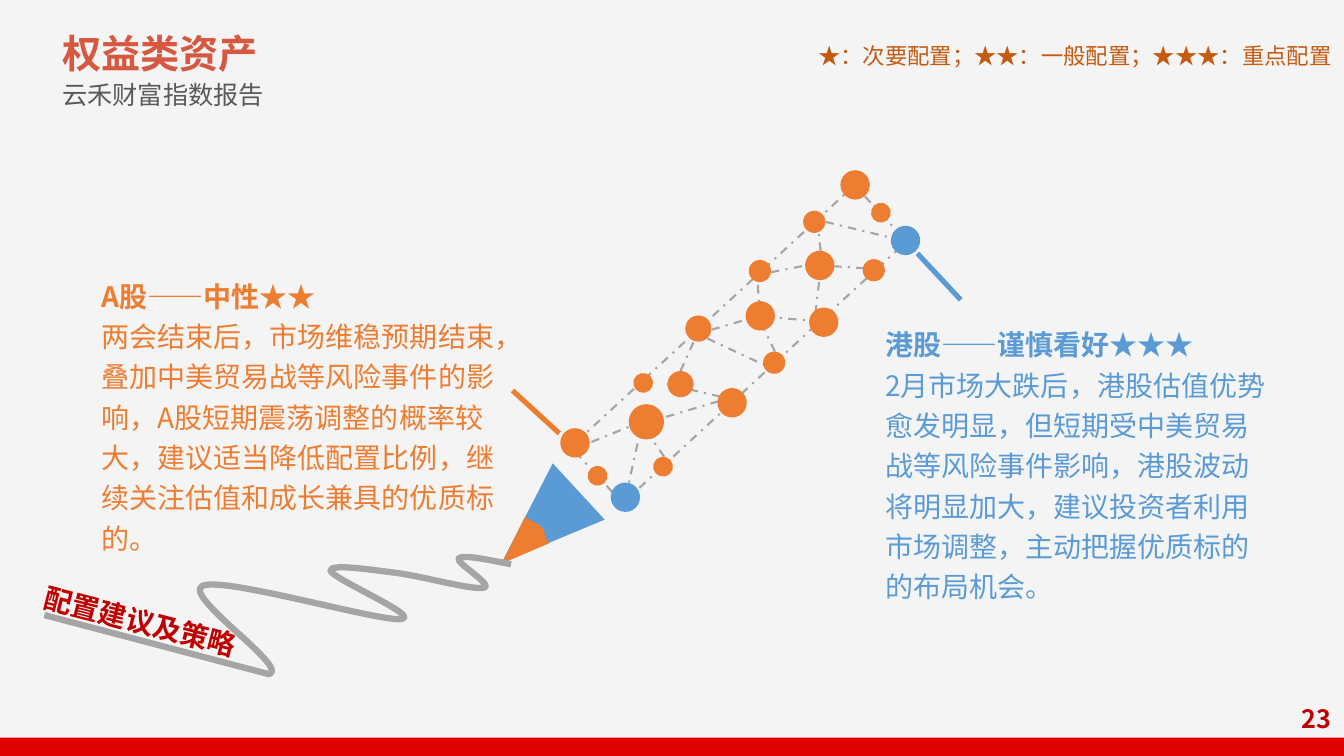
from dataclasses import dataclass

import pptx
import pptx.dml.color
import pptx.enum.dml
import pptx.enum.shapes
import pptx.enum.text
import pptx.oxml
import pptx.util
from pptx.util import Cm

SHAPE = pptx.enum.shapes.MSO_SHAPE
ALIGN = pptx.enum.text.PP_ALIGN
ANCHOR = pptx.enum.text.MSO_ANCHOR


@dataclass(frozen=True)
class Theme:
    font: str = "Noto Sans CJK SC"
    back: str = "F4F4F4"
    band: str = "E10000"
    title: str = "D65840"
    sub: str = "595959"
    key: str = "C55A11"
    mark: str = "C00000"
    warm: str = "ED7D31"
    cool: str = "5B9BD5"
    wire: str = "A5A5A5"
    head: float = 28
    body: float = 20
    small: float = 18
    note: float = 16


THEME = Theme()


@dataclass(frozen=True)
class Run:
    text: str
    size: float
    color: str
    bold: bool = False


@dataclass(frozen=True)
class Box:
    x: float
    y: float
    w: float
    h: float
    paras: list[list[Run]]
    align: ALIGN = ALIGN.LEFT
    anchor: ANCHOR = ANCHOR.MIDDLE
    space: float = 1.0
    foot: float = 0.13
    turn: float = 0
    wrap: bool = True


@dataclass(frozen=True)
class Dot:
    x: float
    y: float
    d: float
    color: str = THEME.warm


@dataclass(frozen=True)
class Block:
    kind: SHAPE
    x: float
    y: float
    w: float
    h: float
    fill: str
    turn: float = 0


Point = tuple[float, float]
Move = tuple[Point, ...]  # one point for a line, three for a curve


def rgb(color: str) -> pptx.dml.color.RGBColor:
    return pptx.dml.color.RGBColor.from_string(color)


def fill_text(shape, box: Box) -> None:
    shape.left, shape.top, shape.width, shape.height = map(Cm, (box.x, box.y, box.w, box.h))
    shape.rotation = box.turn
    frame = shape.text_frame
    frame.auto_size = pptx.enum.text.MSO_AUTO_SIZE.NONE
    frame.word_wrap = box.wrap
    frame.vertical_anchor = box.anchor
    frame.margin_left = frame.margin_right = Cm(0.25)
    frame.margin_top, frame.margin_bottom = Cm(0.13), Cm(box.foot)
    for i, runs in enumerate(box.paras):
        para = frame.paragraphs[0] if i == 0 else frame.add_paragraph()
        para.alignment, para.line_spacing = box.align, box.space
        para.space_before = para.space_after = pptx.util.Pt(0)
        for item in runs:
            run = para.add_run()
            run.text = item.text
            run.font.name, run.font.size = THEME.font, pptx.util.Pt(item.size)
            run.font.bold = item.bold
            run.font.color.rgb = rgb(item.color)
            east = pptx.oxml.xmlchemy.OxmlElement("a:ea")
            east.set("typeface", THEME.font)
            run.font._element.find(pptx.oxml.ns.qn("a:latin")).addnext(east)


def add_block(slide, part: Block):
    shape = slide.shapes.add_shape(part.kind, *map(Cm, (part.x, part.y, part.w, part.h)))
    shape.rotation = part.turn
    shape.shadow.inherit = False
    shape.fill.solid()
    shape.fill.fore_color.rgb = rgb(part.fill)
    shape.line.fill.background()
    return shape


def set_wire(line, width: float, dash: bool = False) -> None:
    line.color.rgb = rgb(THEME.wire)
    line.width = pptx.util.Pt(width)
    if dash:
        line.dash_style = pptx.enum.dml.MSO_LINE.DASH_DOT


def add_link(slide, ends: tuple[float, float, float, float]) -> None:
    link = slide.shapes.add_connector(pptx.enum.shapes.MSO_CONNECTOR.STRAIGHT, *map(Cm, ends))
    set_wire(link.line, 1.5, True)
    link._element.spPr.append(pptx.oxml.xmlchemy.OxmlElement("a:effectLst"))


def add_path(slide, start: Point, moves: list[Move], close: bool):
    """Lay all points as lines, then fold each group of three into a curve."""
    pen = slide.shapes.build_freeform(Cm(start[0]), Cm(start[1]))
    pen.add_line_segments([(Cm(x), Cm(y)) for move in moves for x, y in move], close=close)
    shape = pen.convert_to_shape()
    shape.shadow.inherit = False
    lines = iter(list(shape._element.iter(pptx.oxml.ns.qn("a:lnTo"))))
    for move in moves:
        group = [next(lines) for _ in move]
        if len(group) == 3:
            curve = pptx.oxml.xmlchemy.OxmlElement("a:cubicBezTo")
            group[0].addprevious(curve)
            for line in group:
                curve.append(line[0])
                line.getparent().remove(line)
    return shape


TILT = 47.3
HEAD = Box(1.32, 0.46, 11.35, 2.46, [
    [Run("权益类资产", THEME.head, THEME.title, True)],
    [Run("云禾财富指数报告", THEME.small, THEME.sub)]], anchor=ANCHOR.TOP, space=1.12)
NOTES = [
    Box(20.37, 0.94, 13.49, 0.94, [[Run("★：次要配置；★★：一般配置；★★★：重点配置",
        THEME.note, THEME.key)]], anchor=ANCHOR.TOP, wrap=False),
    Box(32.31, 17.6, 1.5, 1.02, [[Run("23", THEME.small, THEME.mark, True)]], ALIGN.RIGHT),
    Box(0.48, 15.02, 5.79, 1.19, [[Run("配置建议及策略", THEME.body, THEME.mark, True)]],
        ALIGN.RIGHT, turn=14.4),
    Box(2.31, 6.82, 10.8, 8.23, [
        [Run("A股——中性★★", THEME.body, THEME.warm, True)],
        [Run("两会结束后，市场维稳预期结束，叠加中美贸易战等风险事件的影响，A股短期震荡调整的概率较大，"
             "建议适当降低配置比例，继续关注估值和成长兼具的优质标的。", THEME.body, THEME.warm)]],
        space=1.2, foot=1.16),
    Box(22.06, 7.81, 10.24, 7.95, [
        [Run("港股——谨慎看好", THEME.body, THEME.cool, True), Run("★★★", THEME.body, THEME.cool)],
        [Run("2月市场大跌后，港股估值优势愈发明显，但短期受中美贸易战等风险事件影响，港股波动将明显加大，"
             "建议投资者利用市场调整，主动把握优质标的的布局机会。", THEME.body, THEME.cool)]],
        space=1.2, foot=0.4)]

# Dots by centre and width
DOTS = [
    Dot(15.06, 11.99, 0.5), Dot(21.55, 4.66, 0.74), Dot(22.82, 6.06, 0.74, THEME.cool),
    Dot(22.02, 6.81, 0.56), Dot(20.52, 5.59, 0.56), Dot(22.2, 5.36, 0.5),
    Dot(14.49, 11.16, 0.74), Dot(15.76, 12.53, 0.74, THEME.cool), Dot(20.66, 6.69, 0.74),
    Dot(17.6, 8.28, 0.66), Dot(19.51, 9.14, 0.56), Dot(19.15, 6.83, 0.56),
    Dot(18.45, 10.15, 0.74), Dot(20.76, 8.12, 0.74), Dot(16.71, 11.76, 0.5),
    Dot(16.21, 9.65, 0.5), Dot(16.29, 10.63, 0.89), Dot(17.15, 9.68, 0.66),
    Dot(19.16, 7.96, 0.74)]
LINKS = [
    (22.71, 6.05, 20.8, 5.59), (21.79, 6.76, 21.03, 6.71), (20.55, 7.9, 20.65, 7.04),
    (20.68, 6.32, 20.6, 5.54), (19.43, 6.86, 20.5, 6.65), (19.53, 8.86, 19.13, 8.03),
    (17.93, 8.31, 19.05, 7.98), (19.15, 7.98, 19.08, 6.88), (19.28, 7.98, 20.65, 8.1),
    (17.83, 8.53, 19.48, 9.3), (17.15, 9.35, 17.55, 8.46), (16.81, 9.68, 18.44, 10.06),
    (16.74, 11.51, 16.26, 10.82), (16.18, 10.62, 14.63, 11.25), (15.77, 12.52, 16.13, 10.9),
    (16.23, 10.67, 18.21, 10.08)]

# Pencil lead and scribble outlines
LEAD = [((12.65, 14.2),), ((13.84, 13.69),), ((13.74, 13.56), (13.74, 13.39), (13.64, 13.26))]
TRAIL = [
    ((12.27, 14.1), (11.68, 13.97), (11.56, 14.07)), ((11.46, 14.17), (12.47, 14.76), (12.19, 14.81)),
    ((11.91, 14.88), (10.57, 14.5), (9.93, 14.43)), ((9.3, 14.35), (8.31, 14.2), (8.33, 14.38)),
    ((8.36, 14.58), (10.64, 15.54), (10.11, 15.6)), ((9.55, 15.67), (5.66, 14.53), (5.11, 14.76)),
    ((4.55, 14.99), (7.34, 16.84), (6.78, 16.99)), ((1.12, 15.5),)]


def main() -> None:
    deck = pptx.Presentation()
    deck.slide_width, deck.slide_height = Cm(33.87), Cm(19.05)
    slide = deck.slides.add_slide(deck.slide_layouts[5])
    slide.background.fill.solid()
    slide.background.fill.fore_color.rgb = rgb(THEME.back)

    # Band and title
    add_block(slide, Block(SHAPE.RECTANGLE, 0, 18.59, 33.87, 0.46, THEME.band))
    fill_text(slide.shapes.title, HEAD)

    # Pencil point
    add_block(slide, Block(SHAPE.ISOSCELES_TRIANGLE, 12.65, 11.96, 1.93, 2.64,
                           THEME.cool, TILT + 180))
    tip = add_path(slide, (13.23, 13.03), LEAD, True)
    tip.fill.solid()
    tip.fill.fore_color.rgb = rgb(THEME.warm)
    tip.line.fill.background()

    # Pencil body: frame, links, dots
    frame = add_block(slide, Block(SHAPE.RECTANGLE, 17.65, 3.81, 1.93, 9.73, THEME.back, TILT))
    frame.fill.background()
    set_wire(frame.line, 1.5, True)
    for ends in LINKS:
        add_link(slide, ends)
    for dot in DOTS:
        add_block(slide, Block(SHAPE.OVAL, dot.x - dot.d / 2, dot.y - dot.d / 2,
                               dot.d, dot.d, dot.color, TILT))

    # Scribble
    trail = add_path(slide, (12.88, 14.22), TRAIL, False)
    trail.fill.background()
    set_wire(trail.line, 4.5)

    # Pointers and text
    add_block(slide, Block(SHAPE.RECTANGLE, 13.44, 9.58, 0.13, 1.6, THEME.warm, 132.5))
    add_block(slide, Block(SHAPE.RECTANGLE, 23.6, 6.17, 0.13, 1.6, THEME.cool, 137))
    for note in NOTES:
        fill_text(slide.shapes.add_textbox(0, 0, 0, 0), note)

    deck.save("out.pptx")


if __name__ == "__main__":
    main()
